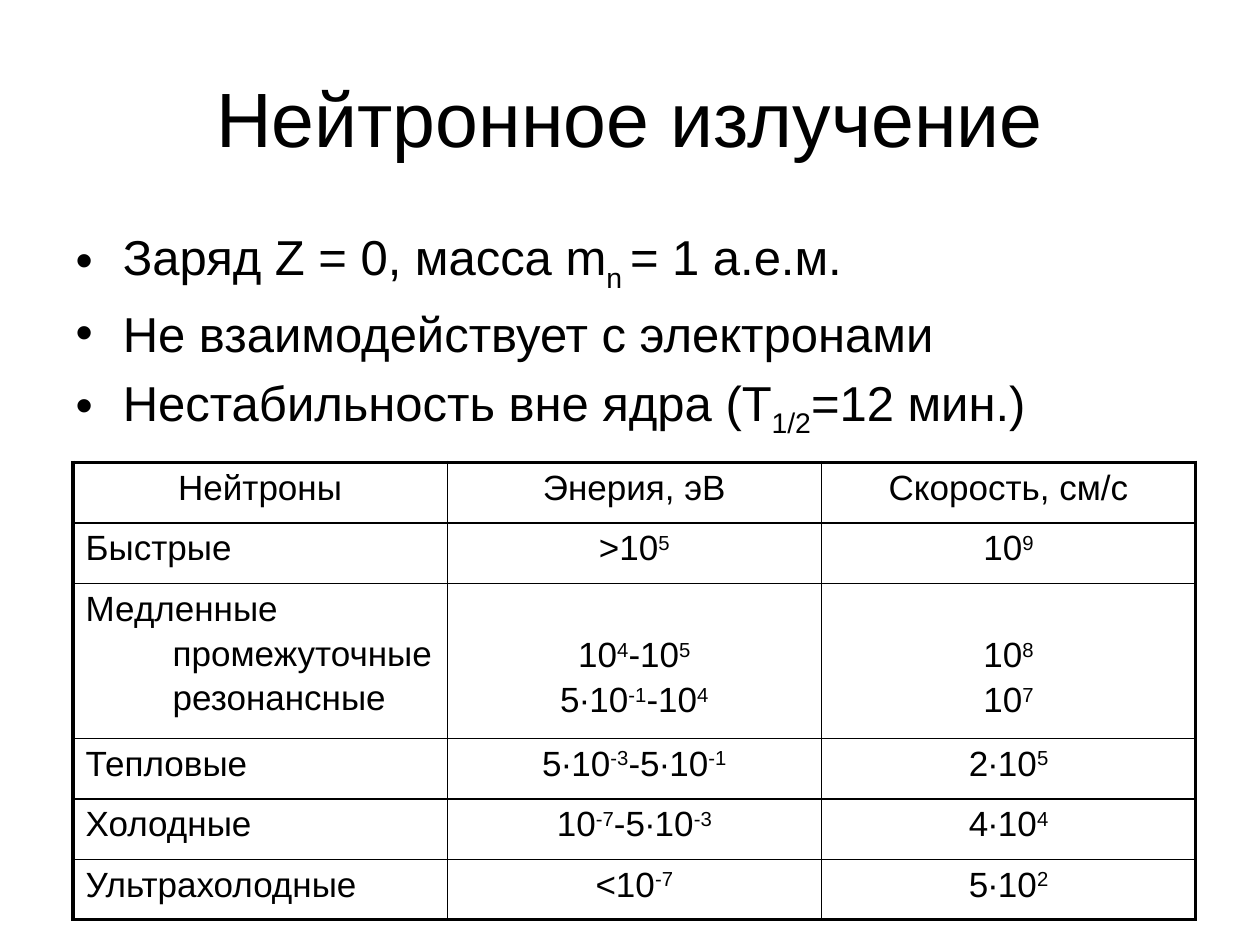
import pptx
import pptx.util
import pptx.dml.color
import pptx.enum.text
import pptx.oxml
import pptx.oxml.ns

Inches, Pt = pptx.util.Inches, pptx.util.Pt
ALIGN = pptx.enum.text.PP_ALIGN

# Content: odd parts between bars are subscripts (bullets) or superscripts (table)
TITLE = "Нейтронное излучение"
BULLETS = [
    "Заряд Z = 0, масса m|n |= 1 а.е.м.",
    "Не взаимодействует с электронами",
    "Нестабильность вне ядра (T|1/2|=12 мин.)",
]
ROWS = [
    (["Нейтроны"], ["Энерия, эВ"], ["Скорость, см/с"]),
    (["Быстрые"], [">10|5"], ["10|9"]),
    (["Медленные", "промежуточные", "резонансные"],
     ["10|4|-10|5", "5∙10|-1|-10|4"], ["10|8", "10|7"]),
    (["Тепловые"], ["5∙10|-3|-5∙10|-1"], ["2∙10|5"]),
    (["Холодные"], ["10|-7|-5∙10|-3"], ["4∙10|4"]),
    (["Ультрахолодные"], ["<10|-7"], ["5∙10|2"]),
]
ROW_H, TALL_ROW_H, COL_W = 0.48, 1.23, 2.97
LINE_H = 0.37
SUB, SUPER = -25000, 30000


def color(value):
    return pptx.dml.color.RGBColor.from_string(value)


def write(tf, lines, size, shift=0, align=None):
    for i, line in enumerate(lines):
        p = tf.add_paragraph() if i else tf.paragraphs[0]
        p.alignment = align
        p.font.name, p.font.size = "Arial", Pt(size)
        p.font.color.rgb = color("000000")
        for j, part in enumerate(line.split("|")):
            if part:
                r = p.add_run()
                r.text = part
                if j % 2:
                    r._r.get_or_add_rPr().set("baseline", str(shift))


def set_borders(cell, widths):
    tc_pr = cell._tc.get_or_add_tcPr()
    for side, width in zip("LRTB", widths):
        tc_pr.append(pptx.oxml.parse_xml(
            f'<a:ln{side} {pptx.oxml.ns.nsdecls("a")} w="{Pt(width)}">'
            '<a:solidFill><a:srgbClr val="000000"/></a:solidFill>'
            f'</a:ln{side}>'))


def place(sp, left, top, width, height):
    sp.left, sp.top = Inches(left), Inches(top)
    sp.width, sp.height = Inches(width), Inches(height)


prs = pptx.Presentation()
prs.slide_width, prs.slide_height = Inches(10), Inches(7.5)
s = prs.slides.add_slide(prs.slide_layouts[1])

# Title and bullets
title, body = s.placeholders
place(title, 0.5, 0.3, 9, 1.25)
write(title.text_frame, [TITLE], 44, align=ALIGN.CENTER)
place(body, 0.5, 1.75, 9.08, 2.08)
write(body.text_frame, BULLETS, 28, SUB)

# Table of neutron types
heights = [TALL_ROW_H if len(row[0]) > 1 else ROW_H for row in ROWS]
n_rows, n_cols = len(ROWS), len(ROWS[0])
table = s.shapes.add_table(n_rows, n_cols, Inches(0.58), Inches(3.67),
                           Inches(COL_W * n_cols), Inches(sum(heights))).table
table.first_row = table.horz_banding = False
for col in table.columns:
    col.width = Inches(COL_W)
for i, row in enumerate(ROWS):
    table.rows[i].height = Inches(heights[i])
    for j, lines in enumerate(row):
        cell = table.cell(i, j)
        align = ALIGN.LEFT if i and j == 0 else ALIGN.CENTER
        write(cell.text_frame, lines, 20, SUPER, align)
        # Values line up with the indented subtypes in the first column
        cell.margin_top = Inches(0.05 + LINE_H * (len(row[0]) - len(lines)))
        for p in cell.text_frame.paragraphs[1:]:
            p.space_before = Pt(3.3)
            if j == 0:
                p._p.get_or_add_pPr().set("marL", str(Inches(0.69)))
        outer = (j == 0, j == n_cols - 1, i == 0, i == n_rows - 1)
        set_borders(cell, [2.25 if edge else 1 for edge in outer])
        cell.fill.background()

prs.save("out.pptx")
